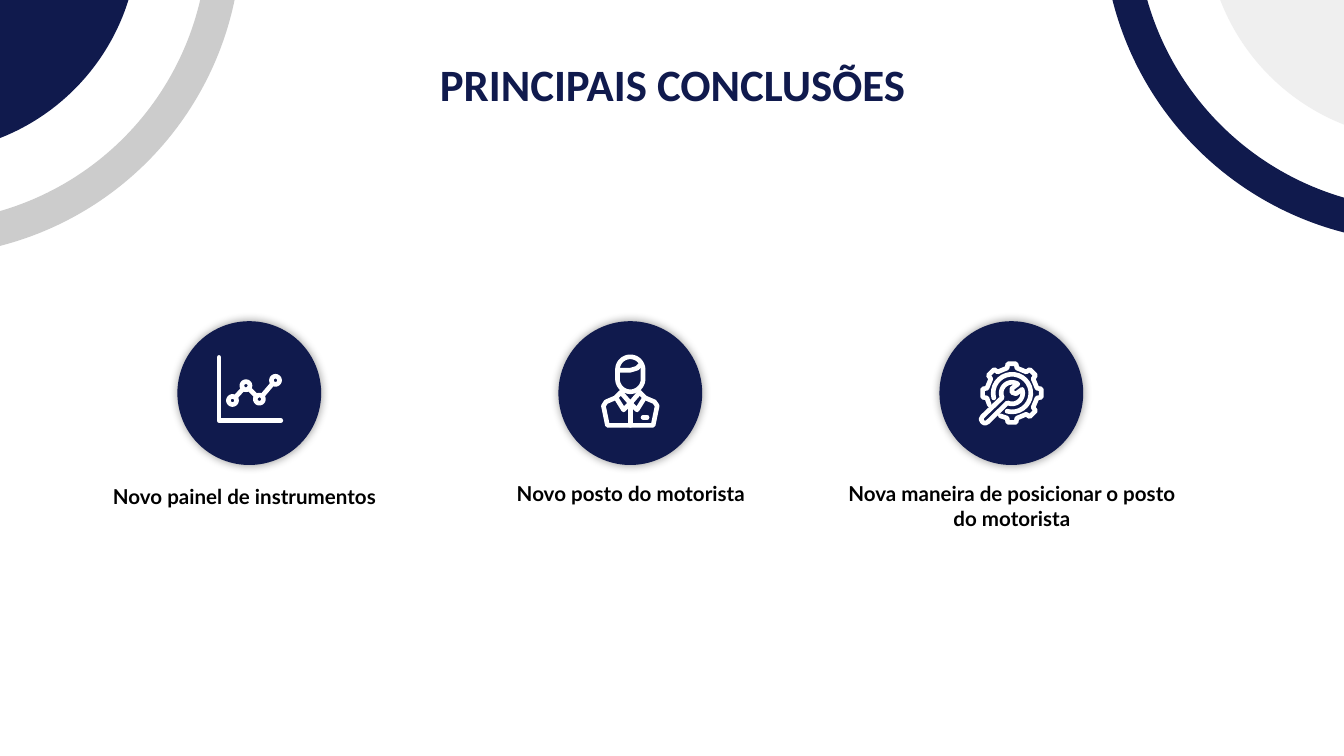
from math import cos, radians, sin

from lxml import etree
from pptx import Presentation
from pptx.dml.color import RGBColor
from pptx.enum.shapes import MSO_SHAPE
from pptx.enum.text import PP_ALIGN
from pptx.oxml.ns import qn
from pptx.util import Inches, Pt

OVAL = MSO_SHAPE.OVAL
CENTER = PP_ALIGN.CENTER
COLORS = {"navy": "101A4D", "gray": "CCCCCC", "pale": "EFEFEF",
          "white": "FFFFFF", "black": "000000"}
CORNERS = [(-0.595, -0.485, "navy", "gray"), (10.595, -0.585, "pale", "navy")]
DISC_LEFT, DISC_TOP, DISC_SIZE, DISC_STEP = 1.32, 2.39, 1.07, 2.835
LABELS = [
    ("Novo painel de instrumentos", 0.67, 3.46, 2.3, 0.63, 1.5),
    ("Novo posto do motorista", 3.43, 3.53, 2.53, 0.29, 1),
    ("Nova maneira de posicionar o posto do motorista", 6.2, 3.53, 2.66, 0.66, 1),
]


def color(name):
    """Return the named palette colour."""
    return RGBColor.from_string(COLORS[name])


def add_circle(page, x, y, diameter, fill=None, line=None):
    """Add a circle centred on x, y with a fill or an 18 pt ring."""
    left, top = x - diameter / 2, y - diameter / 2
    circle = page.shapes.add_shape(
        OVAL, Inches(left), Inches(top), Inches(diameter), Inches(diameter))
    circle.shadow.inherit = False
    if fill:
        circle.fill.solid()
        circle.fill.fore_color.rgb = color(fill)
    else:
        circle.fill.background()
    if line:
        circle.line.color.rgb = color(line)
        circle.line.width = Pt(18)
    else:
        circle.line.fill.background()
    return circle


def add_glow(shape):
    """Give a shape a soft, centred black shadow."""
    effects = shape.element.spPr.find(qn("a:effectLst"))
    shadow = etree.SubElement(effects, qn("a:outerShdw"), blurRad=str(Pt(5)))
    tint = etree.SubElement(shadow, qn("a:srgbClr"), val=COLORS["black"])
    etree.SubElement(tint, qn("a:alpha"), val="40000")


def add_text(page, text, left, top, width, height, font, size, tint,
             spacing=1, inset=0.05):
    """Add a wrapped, centred, bold text box."""
    box = page.shapes.add_textbox(
        Inches(left), Inches(top), Inches(width), Inches(height))
    frame = box.text_frame
    frame.word_wrap = True
    frame.margin_top = frame.margin_bottom = Inches(inset)
    para = frame.paragraphs[0]
    para.text = text
    para.alignment = CENTER
    para.line_spacing = spacing
    para.font.name = font
    para.font.size = Pt(size)
    para.font.bold = True
    para.font.color.rgb = color(tint)


def add_strokes(page, *strokes):
    """Draw polylines as one white outline with round ends."""
    paths = [[(Inches(x), Inches(y)) for x, y in stroke] for stroke in strokes]
    builder = page.shapes.build_freeform(*paths[0][0])
    for index, points in enumerate(paths):
        if index:
            builder.move_to(*points[0])
        builder.add_line_segments(points[1:], close=points[0] == points[-1])
    outline = builder.convert_to_shape()
    outline.shadow.inherit = False
    outline.fill.background()
    outline.line.color.rgb = color("white")
    outline.line.width = Pt(2.5)
    line = outline.element.spPr.find(qn("a:ln"))
    line.set("cap", "rnd")
    etree.SubElement(line, qn("a:round"))


def polar(center, radius, angle):
    """Return the point at an angle, clockwise from the right."""
    turn = radians(angle)
    return center[0] + radius * cos(turn), center[1] + radius * sin(turn)


def arc(center, radius, start, end):
    """Return points along an arc."""
    return [polar(center, radius, start + (end - start) * i / 24)
            for i in range(25)]


def draw_chart_icon(page):
    """Draw axes with a line of four ringed points."""
    add_strokes(page, [(1.63, 2.66), (1.63, 3.13), (2.09, 3.13)])
    points = [(1.73, 2.98), (1.83, 2.87), (1.93, 2.97), (2.05, 2.83)]
    rings = [arc(point, 0.03, 0, 360)[:-1] for point in points]
    rings = [ring + ring[:1] for ring in rings]
    links = []
    for (x1, y1), (x2, y2) in zip(points, points[1:]):
        dx, dy = (x2 - x1) * 0.2, (y2 - y1) * 0.2
        links.append([(x1 + dx, y1 + dy), (x2 - dx, y2 - dy)])
    add_strokes(page, *rings, *links)


def draw_driver_icon(page):
    """Draw a bust in a jacket with collar and badge."""
    axis = 4.69
    head = arc((axis, 2.75), 0.095, 180, 360) + arc((axis, 2.82), 0.095, 0, 180)
    fringe = [(4.6, 2.755), (axis, 2.755), (4.74, 2.74), (4.77, 2.71)]
    half_jacket = [(4.62, 2.92), (4.58, 2.96), (4.51, 2.99), (4.49, 3.02),
                   (4.52, 3.165)]
    half_collar = [(4.59, 2.97), (4.64, 3.05), (axis, 3)]
    half_neck = [(4.62, 2.92), (axis, 3)]
    halves = [half_jacket, half_collar, half_neck]
    body = [half + [(2 * axis - x, y) for x, y in reversed(half)]
            for half in halves]
    add_strokes(page, head + head[:1], fringe, *body,
                [(axis, 3), (axis, 3.165)])
    add_strokes(page, [(4.785, 3.105), (4.815, 3.105)])


def draw_gear_icon(page):
    """Draw a gear, open at lower left, with a wrench across it."""
    hub = (7.53, 2.925)
    gear = [polar(hub, 0.19, 153)]
    for angle in range(180, 451, 45):
        gear += [polar(hub, radius, angle + shift) for radius, shift in
                 ((0.19, -11), (0.22, -8), (0.22, 8), (0.19, 11))]
    gear.append(polar(hub, 0.19, 477))
    jaw = [(7.53, 2.89), (7.53, 2.92), (7.56, 2.93)]
    handle = [(7.35, 3.14), (7.33, 3.15), (7.31, 3.14), (7.3, 3.12), (7.31, 3.1)]
    wrench = (jaw + arc(hub, 0.08, -20, 115) + handle
              + arc(hub, 0.08, 155, 303) + jaw[:1])
    add_strokes(page, gear, arc(hub, 0.14, 165, 465), wrench)


def main():
    """Build the conclusions slide."""
    deck = Presentation()
    deck.slide_width, deck.slide_height = Inches(10), Inches(10 * 9 / 16)
    page = deck.slides.add_slide(deck.slide_layouts[6])
    for x, y, fill, ring in CORNERS:
        add_circle(page, x, y, 3.25, fill=fill)
        add_circle(page, x, y, 4.53, line=ring)
    add_text(page, "PRINCIPAIS CONCLUSÕES", 0.79, 0.32, 8.43, 0.63,
             "Calibri", 24, "navy", inset=0.1)
    icons = [draw_chart_icon, draw_driver_icon, draw_gear_icon]
    radius = DISC_SIZE / 2
    for index, (draw_icon, label) in enumerate(zip(icons, LABELS)):
        x = DISC_LEFT + index * DISC_STEP + radius
        add_glow(add_circle(page, x, DISC_TOP + radius, DISC_SIZE, fill="navy"))
        draw_icon(page)
        text, left, top, width, height, spacing = label
        add_text(page, text, left, top, width, height, "Lato", 11, "black",
                 spacing)
    deck.save("out.pptx")


if __name__ == "__main__":
    main()
